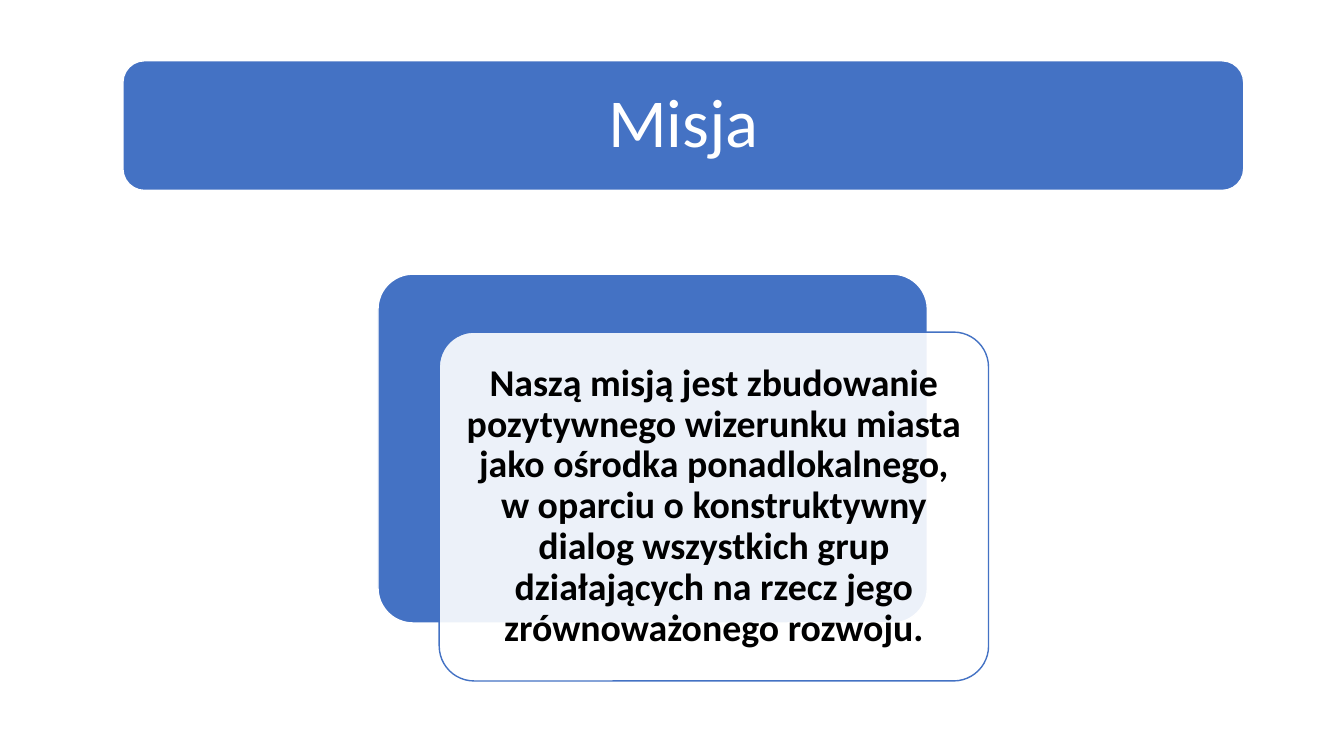
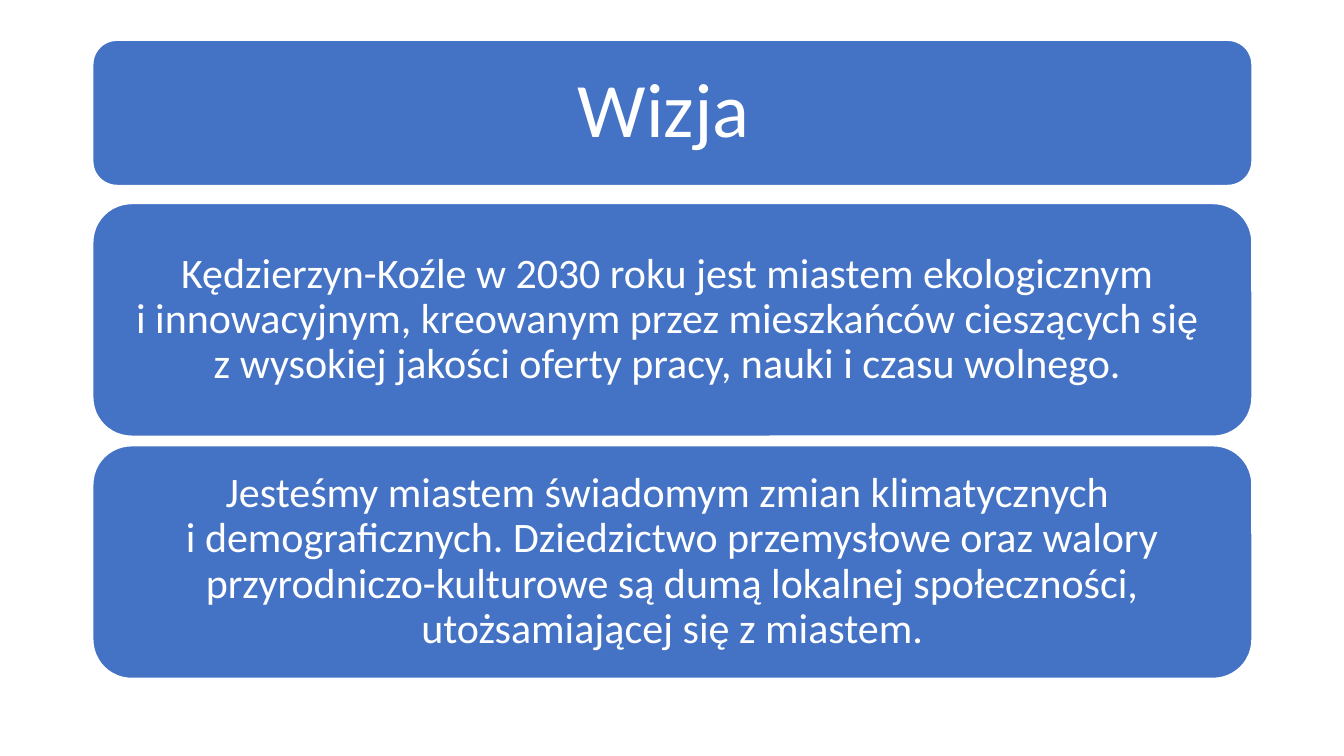
from dataclasses import dataclass, replace

from lxml import etree
from pptx import Presentation
from pptx.dml.color import RGBColor
from pptx.enum.shapes import MSO_SHAPE
from pptx.enum.text import MSO_ANCHOR, MSO_AUTO_SIZE, PP_ALIGN
from pptx.oxml.ns import qn
from pptx.shapes.autoshape import Shape
from pptx.slide import Slide
from pptx.util import Pt

ROUNDED = MSO_SHAPE.ROUNDED_RECTANGLE
MIDDLE = MSO_ANCHOR.MIDDLE
NO_AUTOFIT = MSO_AUTO_SIZE.NONE
CENTER = PP_ALIGN.CENTER

BLUE = RGBColor(0x44, 0x72, 0xC4)
WHITE = RGBColor(0xFF, 0xFF, 0xFF)
BLACK = RGBColor(0x00, 0x00, 0x00)

FONT = "Calibri"
INSET_RATIO = 0.3
TITLE_ONLY_LAYOUT = 5

MISSION = (
    "Naszą misją jest zbudowanie pozytywnego wizerunku miasta jako ośrodka "
    "ponadlokalnego, w oparciu o konstruktywny dialog wszystkich grup "
    "działających na rzecz jego zrównoważonego rozwoju."
)
VISION = (
    "Kędzierzyn-Koźle w 2030 roku jest miastem ekologicznym \n"
    "i innowacyjnym, kreowanym przez mieszkańców cieszących się \n"
    "z wysokiej jakości oferty pracy, nauki i czasu wolnego. ",
    "Jesteśmy miastem świadomym zmian klimatycznych \n"
    "i demograficznych. Dziedzictwo przemysłowe oraz walory "
    "przyrodniczo-kulturowe są dumą lokalnej społeczności, "
    "utożsamiającej się z miastem.",
)


@dataclass(frozen=True)
class Panel:
    """A rounded rectangle with optional text, measured in points."""

    left: float
    top: float
    width: float
    height: float
    text: str = ""
    size: float = 30
    bold: bool = False
    color: RGBColor = WHITE
    fill: RGBColor = BLUE
    line: RGBColor = WHITE
    corner: float = 0.1667
    opacity: int = 100


def write_text(shape: Shape, panel: Panel) -> None:
    """Fill a shape with the centred text of a panel."""
    frame = shape.text_frame
    frame.word_wrap = True
    frame.auto_size = NO_AUTOFIT
    frame.vertical_anchor = MIDDLE
    inset = Pt(panel.size * INSET_RATIO)
    frame.margin_left = frame.margin_right = inset
    frame.margin_top = frame.margin_bottom = inset
    paragraph = frame.paragraphs[0]
    paragraph.text = panel.text
    paragraph.alignment = CENTER
    paragraph.line_spacing = 0.9
    font = paragraph.font
    font.name = FONT
    font.size = Pt(panel.size)
    font.bold = panel.bold
    font.color.rgb = panel.color


def draw_panel(slide: Slide, panel: Panel) -> Shape:
    """Draw a panel and return its shape."""
    shape = slide.shapes.add_shape(
        ROUNDED, Pt(panel.left), Pt(panel.top), Pt(panel.width), Pt(panel.height)
    )
    shape.shadow.inherit = False
    shape.adjustments[0] = panel.corner
    shape.fill.solid()
    shape.fill.fore_color.rgb = panel.fill
    shape.line.color.rgb = panel.line
    shape.line.width = Pt(1)
    if panel.opacity < 100:
        color = shape._element.spPr.find(f"{qn('a:solidFill')}/{qn('a:srgbClr')}")
        etree.SubElement(color, qn("a:alpha"), val=str(panel.opacity * 1000))
    if panel.text:
        write_text(shape, panel)
    return shape


def add_titled_slide(presentation: Presentation, banner: Panel) -> Slide:
    """Add a slide whose title placeholder lies on a banner."""
    slide = presentation.slides.add_slide(presentation.slide_layouts[TITLE_ONLY_LAYOUT])
    bar = draw_panel(slide, replace(banner, text=""))
    title = slide.shapes.title
    title.left, title.top = bar.left, bar.top
    title.width, title.height = bar.width, bar.height
    write_text(title, banner)
    bar._element.addnext(title._element)
    return slide


def build_mission(presentation: Presentation) -> None:
    """Build the mission slide with its two overlapping cards."""
    slide = add_titled_slide(
        presentation, Panel(87.8, 43.4, 800.6, 92.6, "Misja", size=49)
    )
    back = Panel(270, 195.8, 392.4, 249.2, corner=0.1)
    front = replace(
        back,
        left=back.left + 43.7,
        top=back.top + 41.4,
        text=MISSION,
        size=27,
        bold=True,
        color=BLACK,
        fill=WHITE,
        line=BLUE,
        opacity=90,
    )
    for card in (back, front):
        draw_panel(slide, card)


def build_vision(presentation: Presentation) -> None:
    """Build the vision slide with its stacked statements."""
    left, width, height, gap = 66.3, 828, 166.2, 6.8
    slide = add_titled_slide(
        presentation, Panel(left, 28.8, width, 103.7, "Wizja ", size=55)
    )
    for index, statement in enumerate(VISION):
        top = 145.4 + index * (height + gap)
        draw_panel(slide, Panel(left, top, width, height, statement))


def main() -> None:
    """Build and save the presentation."""
    presentation = Presentation()
    presentation.slide_width = Pt(960)
    presentation.slide_height = Pt(540)
    build_mission(presentation)
    build_vision(presentation)
    presentation.save("out.pptx")


if __name__ == "__main__":
    main()
